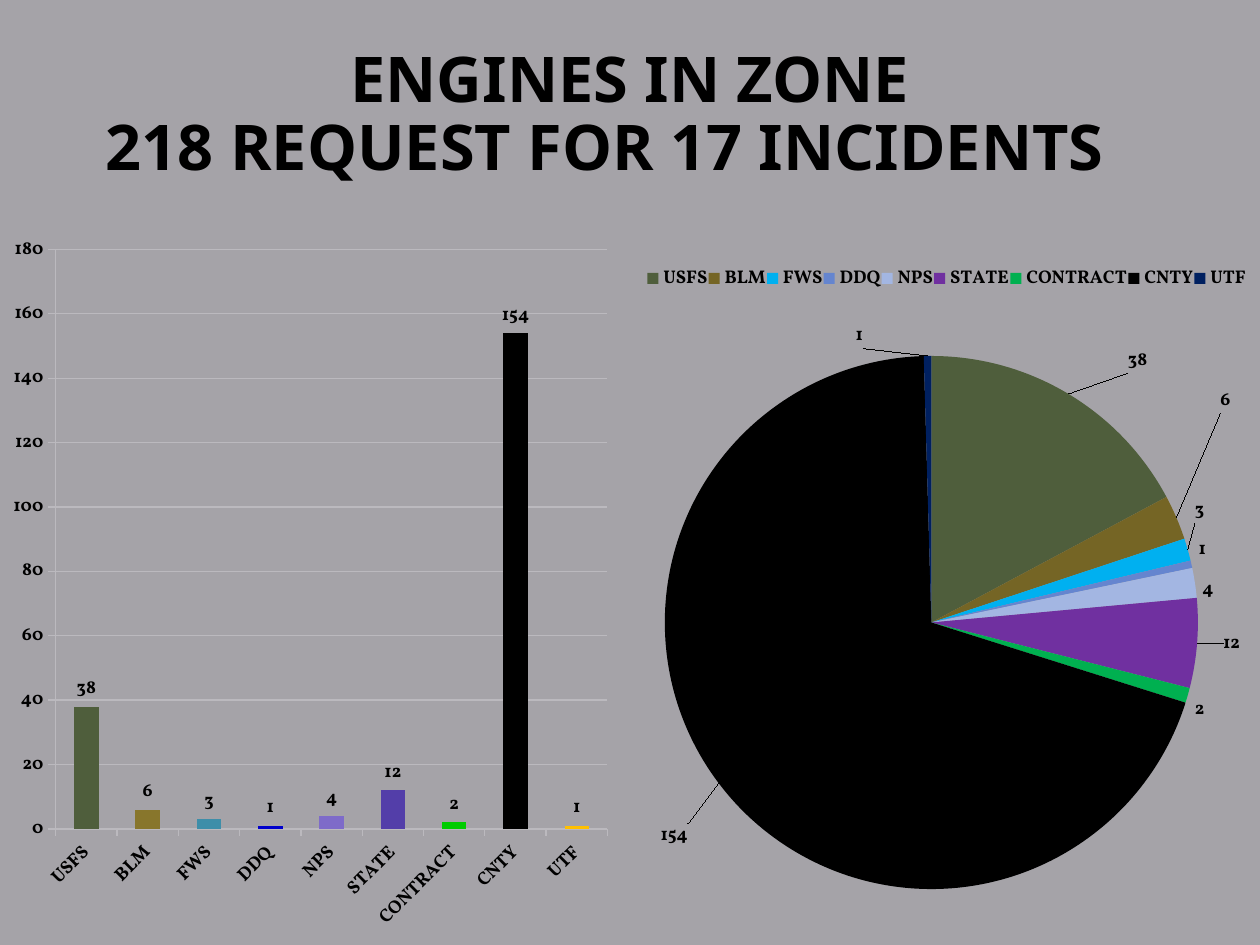
from dataclasses import dataclass
from lxml.etree import SubElement
from pptx import Presentation
from pptx.chart.data import CategoryChartData
from pptx.dml.color import RGBColor
from pptx.enum.chart import XL_CHART_TYPE, XL_LABEL_POSITION, XL_LEGEND_POSITION, XL_TICK_MARK
from pptx.enum.text import MSO_ANCHOR, PP_ALIGN
from pptx.oxml.ns import qn
from pptx.util import Inches, Pt

TITLE = [("ENGINES IN ZONE", 0.4), ("218 REQUEST FOR 17 INCIDENTS", 0)]
UNITS = [
    ("USFS", 38, "4F5E3C", "4F5E3C", (0.09, -0.02)),
    ("BLM", 6, "88762C", "756525", (0.06, -0.14)),
    ("FWS", 3, "3E8EA9", "00B0F0", None),
    ("DDQ", 1, "0000CC", "6585CF", None),
    ("NPS", 4, "7E6BC9", "A3B6E2", None),
    ("STATE", 12, "533EA9", "7030A0", (0.03, 0)),
    ("CONTRACT", 2, "00CC00", "00B050", None),
    ("CNTY", 154, "000000", "000000", (-0.04, 0.05)),
    ("UTF", 1, "FFC000", "002060", (-0.11, 0)),
]
NAMES, COUNTS, BARS, SLICES, SHIFTS = zip(*UNITS)


@dataclass(frozen=True)
class Theme:
    back: str = "A5A3A8"
    ink: str = "000000"
    grid: str = "BBB9BE"
    head: str = "Noto Sans"
    body: str = "Vollkorn"
    big: float = 36
    small: float = 10.5


LOOK = Theme()


def paint(fill, color):
    fill.solid()
    fill.fore_color.rgb = RGBColor.from_string(color)


def style(font, face, size):
    font.name, font.size, font.bold = face, Pt(size), True
    font.color.rgb = RGBColor.from_string(LOOK.ink)


def place(node, spot, **parts):
    for old in node.findall(qn("c:layout")):
        node.remove(old)
    box = SubElement(node, qn("c:layout"))
    node.insert(spot, box)
    box = SubElement(box, qn("c:manualLayout"))
    for tag, val in parts.items():
        SubElement(box, qn(f"c:{tag}")).set("val", str(val))


def frame(**sizes):
    return {"xMode": "edge", "yMode": "edge", **sizes}


def add_title(slide):
    box = slide.shapes.add_textbox(Inches(0.5), Inches(0.3), Inches(9), Inches(1.25))
    text = box.text_frame
    text.word_wrap = True
    text.vertical_anchor = MSO_ANCHOR.MIDDLE
    text.margin_right = Inches(0.5)
    for i, (line, inset) in enumerate(TITLE):
        para = text.add_paragraph() if i else text.paragraphs[0]
        para.alignment = PP_ALIGN.CENTER
        para.line_spacing = 0.9
        para._p.get_or_add_pPr().set("marL", str(Inches(inset)))
        run = para.add_run()
        run.text = line
        style(run.font, LOOK.head, LOOK.big)


def add_chart(slide, kind, left, colors, **area):
    data = CategoryChartData()
    data.categories = NAMES
    data.add_series("Series 1", COUNTS)
    chart = slide.shapes.add_chart(
        kind, Inches(left), Inches(1.75), Inches(4.92), Inches(5.75), data
    ).chart
    chart.has_title = chart.has_legend = False
    style(chart.font, LOOK.body, LOOK.small)
    plot = chart.plots[0]
    series = plot.series[0]
    for i, color in enumerate(colors):
        form = series.points[i].format
        paint(form.fill, color)
        form.line.fill.background()
    series.data_labels.show_value = True
    style(series.data_labels.font, LOOK.body, LOOK.small)
    place(plot._element.getparent(), 0, layoutTarget="inner", **frame(**area))
    return chart, plot, series


def add_bars(slide):
    chart, plot, series = add_chart(
        slide, XL_CHART_TYPE.COLUMN_CLUSTERED, 0, BARS, x=0.09, y=0.04, w=0.89, h=0.8
    )
    plot.gap_width = 150
    plot.vary_by_categories = False
    paint(series.format.fill, "CEB966")
    series.data_labels.position = XL_LABEL_POSITION.OUTSIDE_END
    cats, vals = chart.category_axis, chart.value_axis
    vals.minimum_scale, vals.maximum_scale, vals.major_unit = 0, 180, 20
    vals.has_major_gridlines = True
    for part in (cats, vals, vals.major_gridlines):
        paint(part.format.line.fill, LOOK.grid)
        part.format.line.width = Pt(0.75)
    for axis in (cats, vals):
        axis.major_tick_mark = XL_TICK_MARK.OUTSIDE
        style(axis.tick_labels.font, LOOK.body, LOOK.small)
    cats._element.find(qn("c:txPr")).find(qn("a:bodyPr")).set("rot", "-2700000")


def add_pie(slide):
    chart, plot, series = add_chart(
        slide, XL_CHART_TYPE.PIE, 5.08, SLICES, x=0.04, y=0.17, w=0.86, h=0.77
    )
    plot.vary_by_categories = True
    series.data_labels.position = XL_LABEL_POSITION.BEST_FIT
    for i, shift in enumerate(SHIFTS):
        if shift:
            label = series.points[i].data_label
            style(label.font, LOOK.body, LOOK.small)
            label.position = XL_LABEL_POSITION.OUTSIDE_END
            node = series.data_labels._element.findall(qn("c:dLbl"))[-1]
            place(node, 1, x=shift[0], y=shift[1])
    chart.has_legend = True
    key = chart.legend
    key.position = XL_LEGEND_POSITION.TOP
    key.include_in_layout = False
    style(key.font, LOOK.body, LOOK.small)
    place(key._element, 1, **frame(x=0.01, y=0.06, w=0.97, h=0.04))


def main():
    deck = Presentation()
    deck.slide_width, deck.slide_height = Inches(10), Inches(7.5)
    slide = deck.slides.add_slide(deck.slide_layouts[6])
    paint(slide.background.fill, LOOK.back)
    add_title(slide)
    add_bars(slide)
    add_pie(slide)
    deck.save("out.pptx")


if __name__ == "__main__":
    """Build the slide on engines requested in the zone."""
    main()
